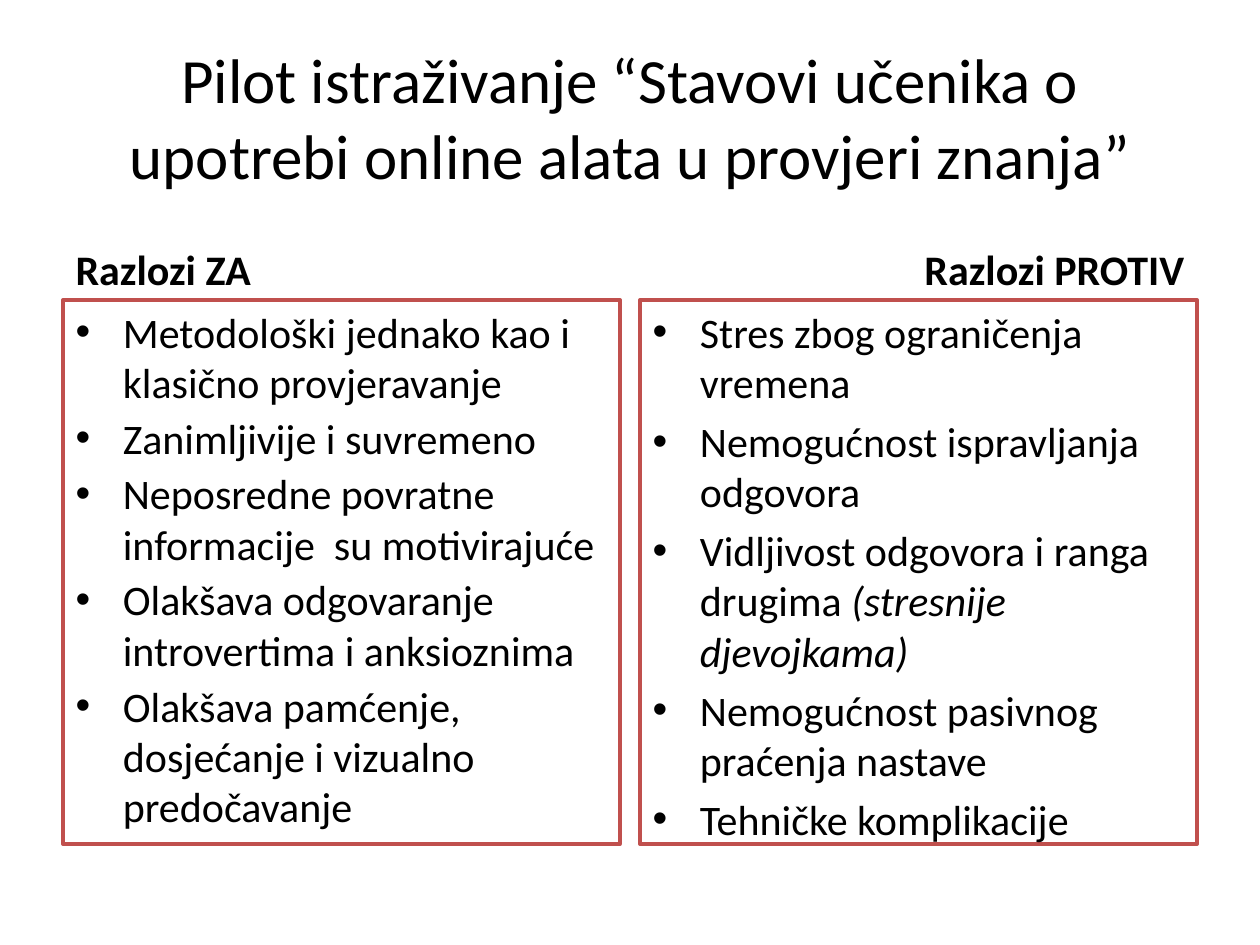
"""Build a comparison slide of reasons for and against online tests."""
from pptx import Presentation
from pptx import util as u
from pptx.dml.color import RGBColor
from pptx.enum import text

TITLE = "Pilot istraživanje “Stavovi učenika o upotrebi online alata u provjeri znanja”"
SIDES = [
    {
        "heading": "Razlozi ZA",
        "align": text.PP_ALIGN.LEFT,
        "gap": 3,
        "reasons": [
            ["Metodološki jednako kao i klasično provjeravanje"],
            ["Zanimljivije i suvremeno"],
            ["Neposredne povratne informacije  su motivirajuće"],
            ["Olakšava odgovaranje introvertima i anksioznima"],
            ["Olakšava pamćenje, dosjećanje i vizualno predočavanje"],
        ],
    },
    {
        "heading": "Razlozi PROTIV",
        "align": text.PP_ALIGN.RIGHT,
        "gap": 4.8,
        "reasons": [
            ["Stres zbog ograničenja vremena"],
            ["Nemogućnost ispravljanja odgovora"],
            ["Vidljivost odgovora i ranga drugima ", "(stresnije djevojkama)"],
            ["Nemogućnost pasivnog praćenja nastave"],
            ["Tehničke komplikacije"],
        ],
    },
]
WIDTH, HEIGHT, MARGIN, GUTTER = 10, 7.5, 0.5, 0.16
COLUMN = (WIDTH - 2 * MARGIN - GUTTER) / 2
HEADING_TOP, HEADING_HEIGHT, LIST_HEIGHT = 1.68, 0.7, 4.32
BLACK, WHITE, RED = "000000", "FFFFFF", "C0504D"


def color(value):
    return RGBColor.from_string(value)


def place(holder, left, top, width, height, anchor):
    holder.left, holder.top = u.Inches(left), u.Inches(top)
    holder.width, holder.height = u.Inches(width), u.Inches(height)
    frame = holder.text_frame
    frame.word_wrap = True
    frame.auto_size = text.MSO_AUTO_SIZE.NONE
    frame.vertical_anchor = anchor
    return frame


def style(paragraph, size, bold=False, align=text.PP_ALIGN.LEFT, before=0):
    paragraph.alignment = align
    paragraph.space_before = u.Pt(before)
    for run in paragraph.runs:
        run.font.name = "Calibri"
        run.font.size = u.Pt(size)
        run.font.bold = bold
        run.font.color.rgb = color(BLACK)


def add_side(heading, reasons, side, left):
    frame = place(heading, left, HEADING_TOP, COLUMN, HEADING_HEIGHT,
                  text.MSO_ANCHOR.BOTTOM)
    frame.text = side["heading"]
    style(frame.paragraphs[0], 24, True, side["align"])

    frame = place(reasons, left, HEADING_TOP + HEADING_HEIGHT, COLUMN, LIST_HEIGHT,
                  text.MSO_ANCHOR.TOP)
    reasons.fill.solid()
    reasons.fill.fore_color.rgb = color(WHITE)
    reasons.line.color.rgb = color(RED)
    reasons.line.width = u.Pt(2)
    for index, (reason, *aside) in enumerate(side["reasons"]):
        paragraph = frame.add_paragraph() if index else frame.paragraphs[0]
        paragraph.text = reason
        for remark in aside:
            run = paragraph.add_run()
            run.text = remark
            run.font.italic = True
        style(paragraph, 24, before=side["gap"] if index else 0)


def main():
    deck = Presentation()
    deck.slide_width, deck.slide_height = u.Inches(WIDTH), u.Inches(HEIGHT)
    slide = deck.slides.add_slide(deck.slide_layouts.get_by_name("Comparison"))
    title, *bodies = slide.placeholders
    frame = place(title, MARGIN, 0.3, WIDTH - 2 * MARGIN, 1.25, text.MSO_ANCHOR.MIDDLE)
    frame.text = TITLE
    style(frame.paragraphs[0], 36, align=text.PP_ALIGN.CENTER)
    for index, side in enumerate(SIDES):
        heading, reasons = bodies[2 * index:2 * index + 2]
        add_side(heading, reasons, side, MARGIN + index * (COLUMN + GUTTER))
    deck.save("out.pptx")


if __name__ == "__main__":
    main()
